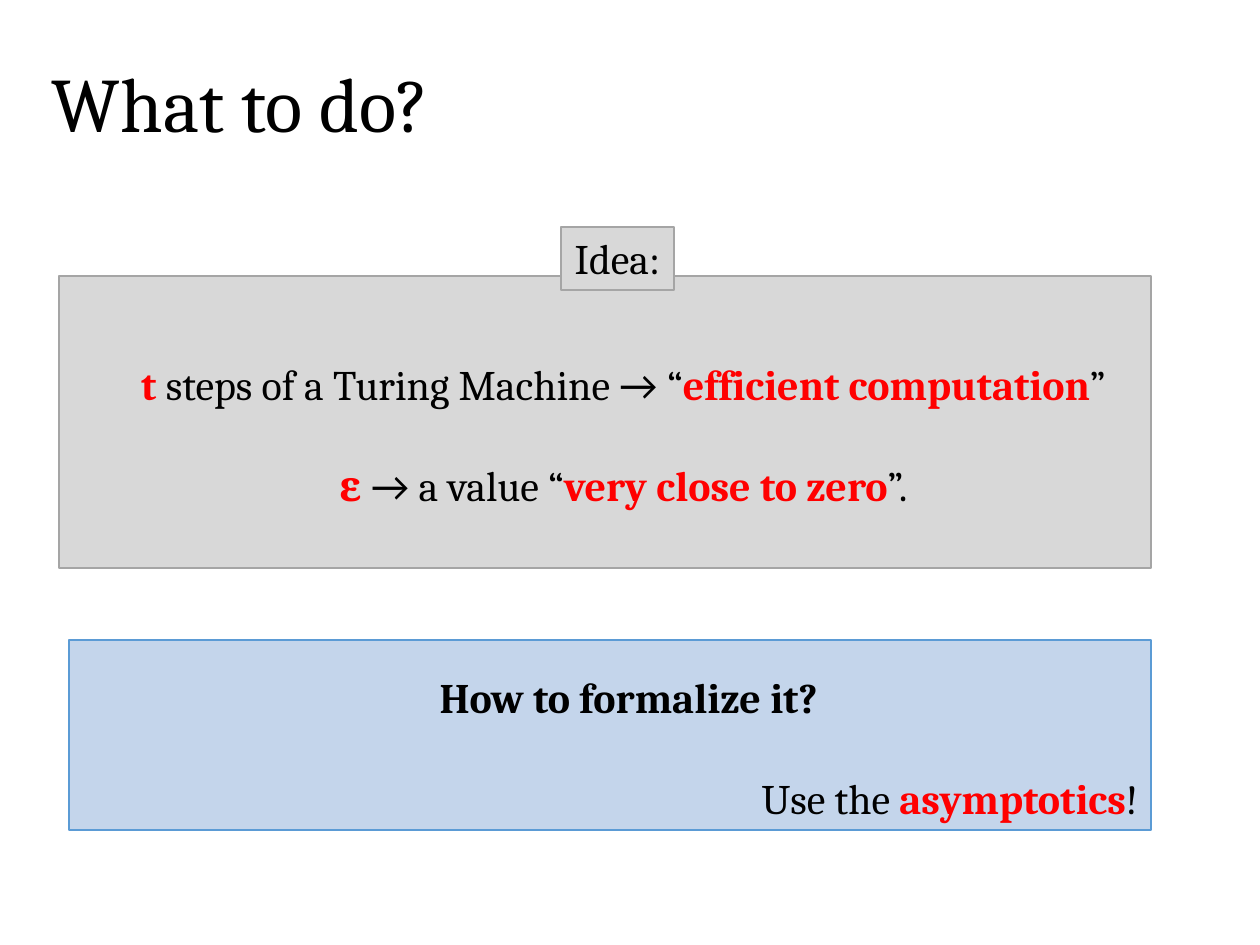
from pptx import Presentation
from pptx.dml.color import RGBColor
from pptx.enum.shapes import MSO_SHAPE
from pptx.enum.text import MSO_ANCHOR, PP_ALIGN
from pptx.util import Pt

PX = 914400 // 126  # EMU per px
THEME = {
    "font": "Cambria", "sign": "Calibri",
    "ink": "000000", "key": "FF0000",
    "grey": ("D8D8D8", "A5A5A5"), "blue": ("C4D5EB", "5B9BD5"),
    "title": 44, "body": 24, "gap": 29, "rule": 0.79,
}
MID, RIGHT = PP_ALIGN.CENTER, PP_ALIGN.RIGHT
PAD = (50, 31, 13, 6)  # left, top, right, bottom
SLIM = (13, 6, 13, 6)

# Content: runs are (words, style); each line is (align, runs)
TITLE = ((39, 29, 1033, 157), "What to do?")
IDEA = [
    (MID, [("t", "key"), (" steps of a Turing Machine ", "ink"), ("→ ", "sign"),
           ("“", "ink"), ("efficient computation", "key"), ("”", "ink")]),
    (MID, [("ε ", "key"), ("→ ", "sign"), ("a value “", "ink"),
           ("very close to zero", "key"), ("”.", "ink")]),
]
PLAN = [
    (MID, [("How to formalize it?", "bold")]),
    (RIGHT, [("Use the ", "ink"), ("asymptotics", "key"), ("!", "ink")]),
]
LABEL = [(MID, [("Idea:", "ink")])]
BOXES = [
    {"at": (59, 276, 1092, 292), "look": "grey", "pad": PAD,
     "anchor": MSO_ANCHOR.MIDDLE, "lines": IDEA},
    {"at": (69, 640, 1082, 190), "look": "blue", "pad": PAD,
     "anchor": MSO_ANCHOR.MIDDLE, "lines": PLAN},
    {"at": (561, 227, 113, 63), "look": "grey", "pad": SLIM,
     "anchor": MSO_ANCHOR.TOP, "lines": LABEL},
]
STYLES = {
    "ink": ("font", "ink", False),
    "bold": ("font", "ink", True),
    "key": ("font", "key", True),
    "sign": ("sign", "ink", False),
}


def emu(at):
    return [n * PX for n in at]


def hue(code):
    return RGBColor.from_string(code)


def put(obj, vals):
    for name, val in vals.items():
        setattr(obj, name, val)


def frame(shape, pad, anchor):
    left, top, right, low = emu(pad)
    put(shape.text_frame, {
        "word_wrap": True, "vertical_anchor": anchor,
        "margin_left": left, "margin_top": top,
        "margin_right": right, "margin_bottom": low})
    return shape.text_frame


def write(para, words, style, size):
    face, tint, bold = STYLES[style]
    run = para.add_run()
    run.text = words
    put(run.font, {"name": THEME[face], "size": Pt(THEME[size]), "bold": bold})
    run.font.color.rgb = hue(THEME[tint])


def draw(slide, box):
    shape = slide.shapes.add_shape(MSO_SHAPE.RECTANGLE, *emu(box["at"]))
    shape.shadow.inherit = False
    fill, edge = THEME[box["look"]]
    shape.fill.solid()
    shape.fill.fore_color.rgb = hue(fill)
    shape.line.color.rgb = hue(edge)
    shape.line.width = Pt(THEME["rule"])
    text = frame(shape, box["pad"], box["anchor"])
    for i, (align, runs) in enumerate(box["lines"]):
        para = text.add_paragraph() if i else text.paragraphs[0]
        put(para, {"alignment": align, "space_before": Pt(THEME["gap"] if i else 0)})
        for words, style in runs:
            write(para, words, style, "body")


def main():
    deck = Presentation()
    put(deck, {"slide_width": 1260 * PX, "slide_height": 945 * PX})
    slide = deck.slides.add_slide(deck.slide_layouts[6])

    # Title
    at, words = TITLE
    text = frame(slide.shapes.add_textbox(*emu(at)), SLIM, MSO_ANCHOR.MIDDLE)
    text.paragraphs[0].line_spacing = 0.9
    write(text.paragraphs[0], words, "ink", "title")

    # Boxes, with the label last so that it lies on top
    for box in BOXES:
        draw(slide, box)
    deck.save("out.pptx")


if __name__ == "__main__":
    main()
